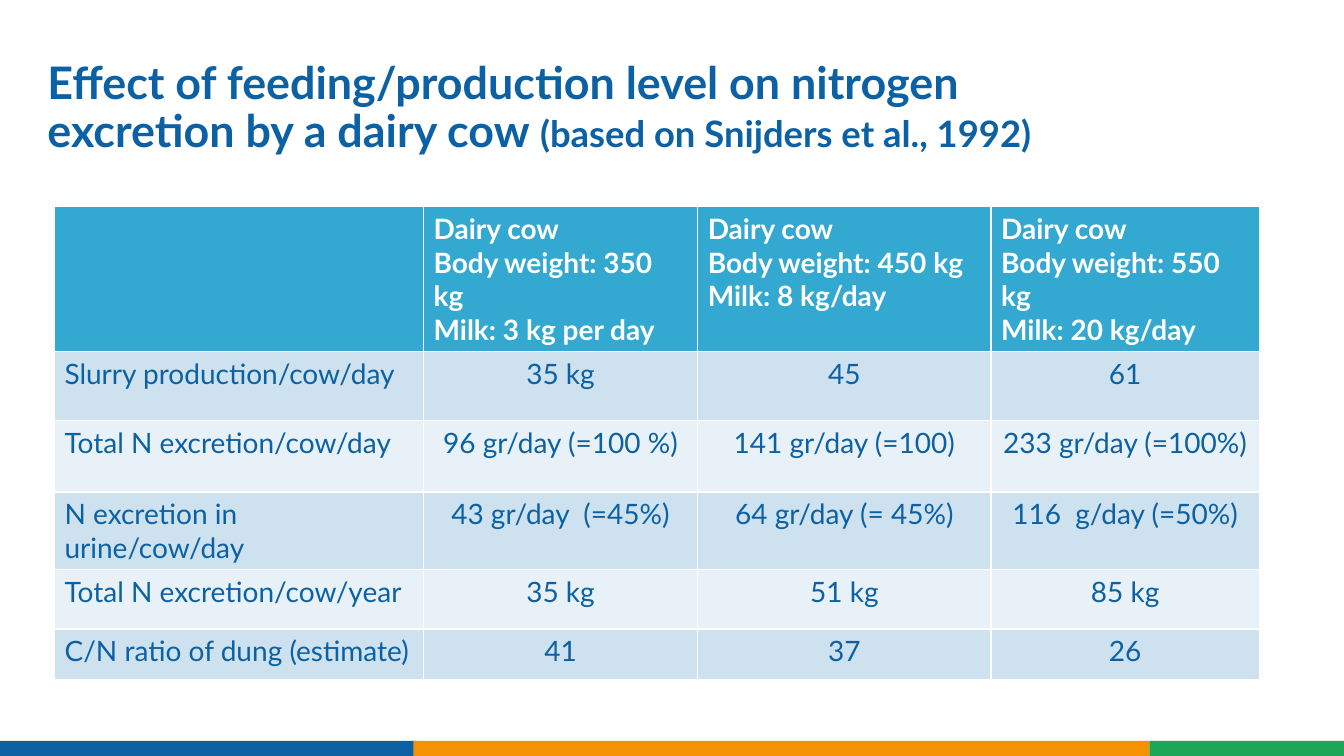
from pptx import Presentation
from pptx.dml.color import RGBColor
from pptx.enum.shapes import MSO_SHAPE
from pptx.enum.text import MSO_ANCHOR, MSO_AUTO_SIZE, PP_ALIGN
from pptx.util import Inches, Pt

RECTANGLE = MSO_SHAPE.RECTANGLE
MIDDLE = MSO_ANCHOR.MIDDLE
NO_FIT = MSO_AUTO_SIZE.NONE
LEFT, CENTER = PP_ALIGN.LEFT, PP_ALIGN.CENTER
TITLE_ONLY = 5

BLUE, ORANGE, GREEN, WHITE = "0B61A4", "F59201", "1BA757", "FFFFFF"
HEADER_FILL = "33A8D1"
BAND_FILLS = ["E8F1F7", "CEE1EE"]


def color(hex_text):
    return RGBColor.from_string(hex_text)


def set_font(font, size, hex_text, bold):
    font.name, font.size, font.bold = "Lato", Pt(size), bold
    font.color.rgb = color(hex_text)


deck = Presentation()
deck.slide_width, deck.slide_height = Inches(13.33), Inches(7.5)
page = deck.slides.add_slide(deck.slide_layouts[TITLE_ONLY])

# Footer bars
for left, width, fill in [(0, 4.14, BLUE), (4.1, 7.3, ORANGE), (11.4, 1.93, GREEN)]:
    bar = page.shapes.add_shape(
        RECTANGLE, Inches(left), Inches(7.35), Inches(width), Inches(0.15))
    bar.shadow.inherit = False
    bar.fill.solid()
    bar.fill.fore_color.rgb = color(fill)
    bar.line.fill.background()

# Title
title = page.shapes.title
title.left, title.top = Inches(0.37), Inches(0.6)
title.width, title.height = Inches(12.17), Inches(0.96)
frame = title.text_frame
frame.word_wrap, frame.auto_size, frame.vertical_anchor = True, NO_FIT, MIDDLE
frame.text = ("Effect of feeding/production level on nitrogen\v"
              "excretion by a dairy cow ")
para = frame.paragraphs[0]
para.alignment, para.line_spacing = LEFT, 0.9
set_font(para.font, 32, BLUE, True)
citation = para.add_run()
citation.text = "(based on Snijders et al., 1992)"
citation.font.size = Pt(26)

# Table: the first row and first column hold the headings
rows = [
    ["",
     "Dairy cow\nBody weight: 350 kg\nMilk: 3 kg per day",
     "Dairy cow\nBody weight: 450 kg\nMilk: 8 kg/day",
     "Dairy cow\nBody weight: 550 kg\nMilk: 20 kg/day"],
    ["Slurry production/cow/day", "35 kg", "45", "61"],
    ["Total N excretion/cow/day",
     "96 gr/day (=100 %)", "141 gr/day (=100)", "233 gr/day (=100%)"],
    ["N excretion in urine/cow/day",
     "43 gr/day  (=45%)", "64 gr/day (= 45%)", "116  g/day (=50%)"],
    ["Total N excretion/cow/year", "35 kg", "51 kg", "85 kg"],
    ["C/N ratio of dung (estimate)", "41", "37", "26"],
]
column_widths = [3.66, 2.72, 2.91, 2.66]
row_heights = [1.27, 0.68, 0.71, 0.71, 0.59, 0.5]

table = page.shapes.add_table(
    len(rows), len(column_widths), Inches(0.54), Inches(2.05),
    Inches(sum(column_widths)), Inches(sum(row_heights))).table
for column, width in zip(table.columns, column_widths):
    column.width = Inches(width)
for row_index, texts in enumerate(rows):
    is_header = row_index == 0
    table.rows[row_index].height = Inches(row_heights[row_index])
    for column_index, text in enumerate(texts):
        cell = table.cell(row_index, column_index)
        cell.fill.solid()
        cell.fill.fore_color.rgb = color(
            HEADER_FILL if is_header else BAND_FILLS[row_index % 2])
        cell.text = text
        for para in cell.text_frame.paragraphs:
            para.alignment = LEFT if is_header or column_index == 0 else CENTER
            set_font(para.font, 20, WHITE if is_header else BLUE, is_header)

deck.save("out.pptx")
